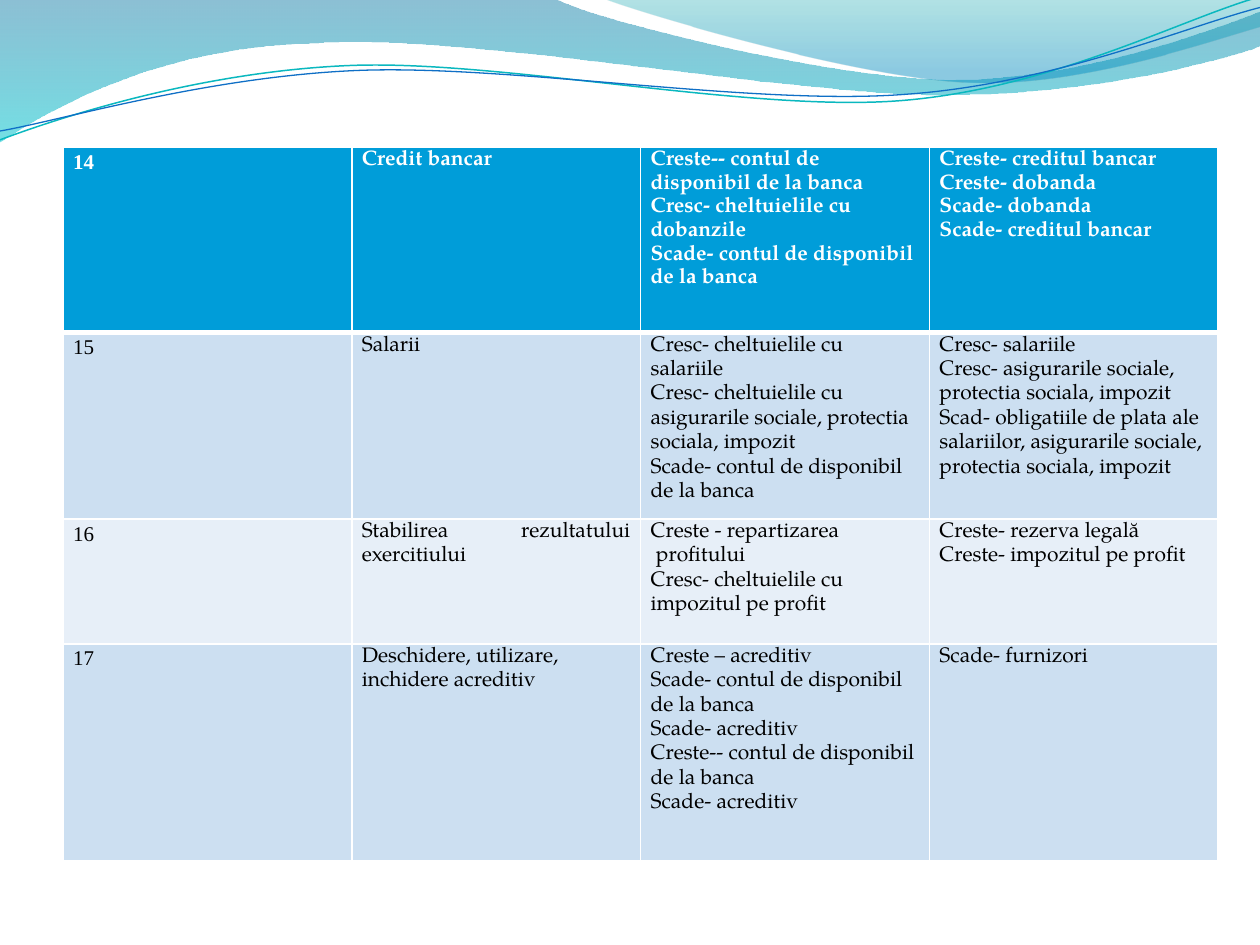
from dataclasses import dataclass
from math import cos, radians, sin

from lxml.etree import SubElement
from pptx import Presentation
from pptx.dml.color import RGBColor
from pptx.enum.text import PP_ALIGN
from pptx.oxml.ns import qn
from pptx.util import Inches, Pt


@dataclass(frozen=True)
class Theme:
    """Colours, fonts and sizes of the slide."""
    white: str = "FFFFFF"
    black: str = "000000"
    head: str = "009DD9"
    bands: tuple = ("CCDFF1", "E7EFF8")
    teal: str = "0AB8BF"
    blue: str = "0F6FC6"
    wide: tuple = ((0, "0074A1", 45), (1, "00C6CF", 55))
    small: tuple = ((0, "00A1A9", 30), (0.8, "008BBF", 45))
    font: str = "TeX Gyre Pagella"
    digit: str = "Times New Roman"
    size: int = 12


THEME = Theme()
LEFT, JUST = PP_ALIGN.LEFT, PP_ALIGN.JUSTIFY
COLS = [9.17 / 4] * 4
HEIGHTS = [1.47, 1.48, 0.99, 1.72]
TILT = 2.7

ROWS = [
    [(JUST, "14"), (JUST, "Credit bancar"),
     (LEFT, "Creste-- contul de disponibil de la banca",
      "Cresc- cheltuielile cu dobanzile",
      "Scade- contul de disponibil de la banca"),
     (JUST, "Creste- creditul bancar", "Creste- dobanda",
      "Scade- dobanda", "Scade- creditul bancar")],
    [(JUST, "15"), (JUST, "Salarii"),
     (LEFT, "Cresc- cheltuielile cu salariile",
      "Cresc- cheltuielile cu asigurarile sociale, protectia sociala, impozit",
      "Scade- contul de disponibil de la banca"),
     (LEFT, "Cresc- salariile",
      "Cresc- asigurarile sociale, protectia sociala, impozit",
      "Scad- obligatiile de plata ale salariilor, asigurarile sociale, "
      "protectia sociala, impozit")],
    [(JUST, "16"), (JUST, "Stabilirea rezultatului exercitiului"),
     (LEFT, "Creste - repartizarea", " profitului",
      "Cresc- cheltuielile cu impozitul pe profit"),
     (JUST, "Creste- rezerva legală", "Creste- impozitul pe profit")],
    [(JUST, "17"), (LEFT, "Deschidere, utilizare, inchidere acreditiv"),
     (LEFT, "Creste – acreditiv", "Scade- contul de disponibil de la banca",
      "Scade- acreditiv", "Creste-- contul de disponibil de la banca",
      "Scade- acreditiv"),
     (JUST, "Scade- furnizori")],
]

WIDE = [(0, 0), (4.4, -0.01), (4.76, 0.17, 6.64, 0.63, 7.58, 0.63),
        (8.53, 0.63, 9.58, 0.26, 10, 0.09), (10.01, 0.36),
        (9.83, 0.44, 8.7, 0.76, 7.46, 0.75),
        (6.22, 0.75, 3.82, 0.28, 2.57, 0.34),
        (1.29, 0.36, 0.46, 0.83, -0.01, 1.13)]
SMALL = [(4.79, -0.01), (5.09, 0.11, 6.82, 0.62, 7.69, 0.65),
         (8.56, 0.69, 9.61, 0.32, 10, 0.21), (10, 0)]
UPPER = [(0, 1.11), (0.48, 0.93, 1.58, 0.57, 2.77, 0.52),
         (3.95, 0.47, 5.93, 0.89, 7.13, 0.8),
         (8.33, 0.71, 9.38, 0.15, 9.98, -0.02)]
LOWER = [(0, 1.04), (0.47, 0.96, 1.64, 0.61, 2.83, 0.56),
         (4.03, 0.51, 5.97, 0.84, 7.17, 0.75),
         (8.36, 0.67, 9.41, 0.21, 10, 0.06)]


def rgb(code):
    """Turn a hex code into a colour."""
    return RGBColor.from_string(code)


def pairs(seg):
    """Split a flat segment into its points."""
    return list(zip(seg[::2], seg[1::2]))


def turn(path, angle, mid):
    """Rotate a path clockwise about a point."""
    c, s = cos(radians(angle)), sin(radians(angle))
    x0, y0 = mid
    return [tuple(v for x, y in pairs(seg)
                  for v in (x0 + (x - x0) * c - (y - y0) * s,
                            y0 + (x - x0) * s + (y - y0) * c))
            for seg in path]


def add_path(slide, path, close):
    """Add a freeform of lines and cubic curves without a shadow."""
    dots = [(Inches(x), Inches(y)) for seg in path for x, y in pairs(seg)]
    pen = slide.shapes.build_freeform(*dots[0])
    pen.add_line_segments(dots[1:], close=close)
    shape = pen.convert_to_shape()
    shape.shadow.inherit = False
    steps = iter(list(shape._element.iter(qn("a:lnTo"))))
    for seg in path[1:]:
        step = next(steps)
        if len(seg) == 6:
            step.tag = qn("a:cubicBezTo")
            for _ in range(2):
                spare = next(steps)
                step.append(spare[0])
                spare.getparent().remove(spare)
    return shape


def add_wave(slide, path, stops):
    """Add a closed wave that fades from top to bottom."""
    shape = add_path(slide, path, True)
    shape.line.fill.background()
    shape.fill.gradient()
    shape.fill.gradient_angle = 270
    for stop, (place, code, _) in zip(shape.fill.gradient_stops, stops):
        stop.position = place
        stop.color.rgb = rgb(code)
    tints = shape._element.spPr.iter(qn("a:srgbClr"))
    for tint, (_, _, alpha) in zip(list(tints), stops):
        SubElement(tint, qn("a:alpha"), val=str(alpha * 1000))


def add_curve(slide, path, mid, color, width):
    """Add an open curved line, tilted about its middle."""
    shape = add_path(slide, turn(path, TILT, mid), False)
    shape.rotation = 360 - TILT
    shape.fill.background()
    shape.line.color.rgb = rgb(color)
    shape.line.width = Pt(width)


def write(para, text, *, font, color, bold, align, hang=0):
    """Write formatted text into a paragraph."""
    para.alignment = align
    para.line_spacing = 1.15
    if hang:
        props = para._p.get_or_add_pPr()
        props.set("marL", str(Inches(hang)))
        props.set("indent", str(Inches(-hang)))
    run = para.add_run()
    run.text = text
    run.font.name = font
    run.font.size = Pt(THEME.size)
    run.font.bold = bold
    run.font.color.rgb = rgb(color)


def set_edge(cell, side, width):
    """Give one side of a cell a white border."""
    edge = SubElement(cell._tc.get_or_add_tcPr(), qn(f"a:ln{side}"),
                      w=str(Pt(width)))
    fill = SubElement(edge, qn("a:solidFill"))
    SubElement(fill, qn("a:srgbClr"), val=THEME.white)


def fill_cell(cell, row, col, align, lines):
    """Set the borders, fill and text of a cell."""
    head = row == 0
    for side in "LRTB":
        thick = (row, side) in ((0, "B"), (1, "T"))
        set_edge(cell, side, 3 if thick else 1)
    cell.fill.solid()
    cell.fill.fore_color.rgb = rgb(
        THEME.head if head else THEME.bands[(row - 1) % 2])
    cell.margin_left = cell.margin_right = Inches(0.08)
    cell.margin_top = cell.margin_bottom = 0
    frame = cell.text_frame
    for i, line in enumerate(lines):
        para = frame.add_paragraph() if i else frame.paragraphs[0]
        write(para, line, font=THEME.font if col else THEME.digit,
              color=THEME.white if head else THEME.black, bold=head,
              align=align, hang=0 if col else 0.38)


def add_grid(slide):
    """Add the table of accounting operations."""
    table = slide.shapes.add_table(
        len(ROWS), len(COLS), Inches(0.5), Inches(1.17),
        Inches(sum(COLS)), Inches(sum(HEIGHTS))).table
    for column, width in zip(table.columns, COLS):
        column.width = Inches(width)
    for r, (height, cells) in enumerate(zip(HEIGHTS, ROWS)):
        table.rows[r].height = Inches(height)
        for c, (align, *lines) in enumerate(cells):
            fill_cell(table.cell(r, c), r, c, align, lines)


def main():
    """Build the slide and save it."""
    deck = Presentation()
    deck.slide_width, deck.slide_height = Inches(10), Inches(7.5)
    slide = deck.slides.add_slide(deck.slide_layouts[6])
    add_wave(slide, WIDE, THEME.wide)
    add_wave(slide, SMALL, THEME.small)
    add_curve(slide, UPPER, (4.99, 0.58), THEME.teal, 0.85)
    add_curve(slide, LOWER, (5, 0.59), THEME.blue, 0.75)
    add_grid(slide)
    deck.save("out.pptx")


if __name__ == "__main__":
    main()
